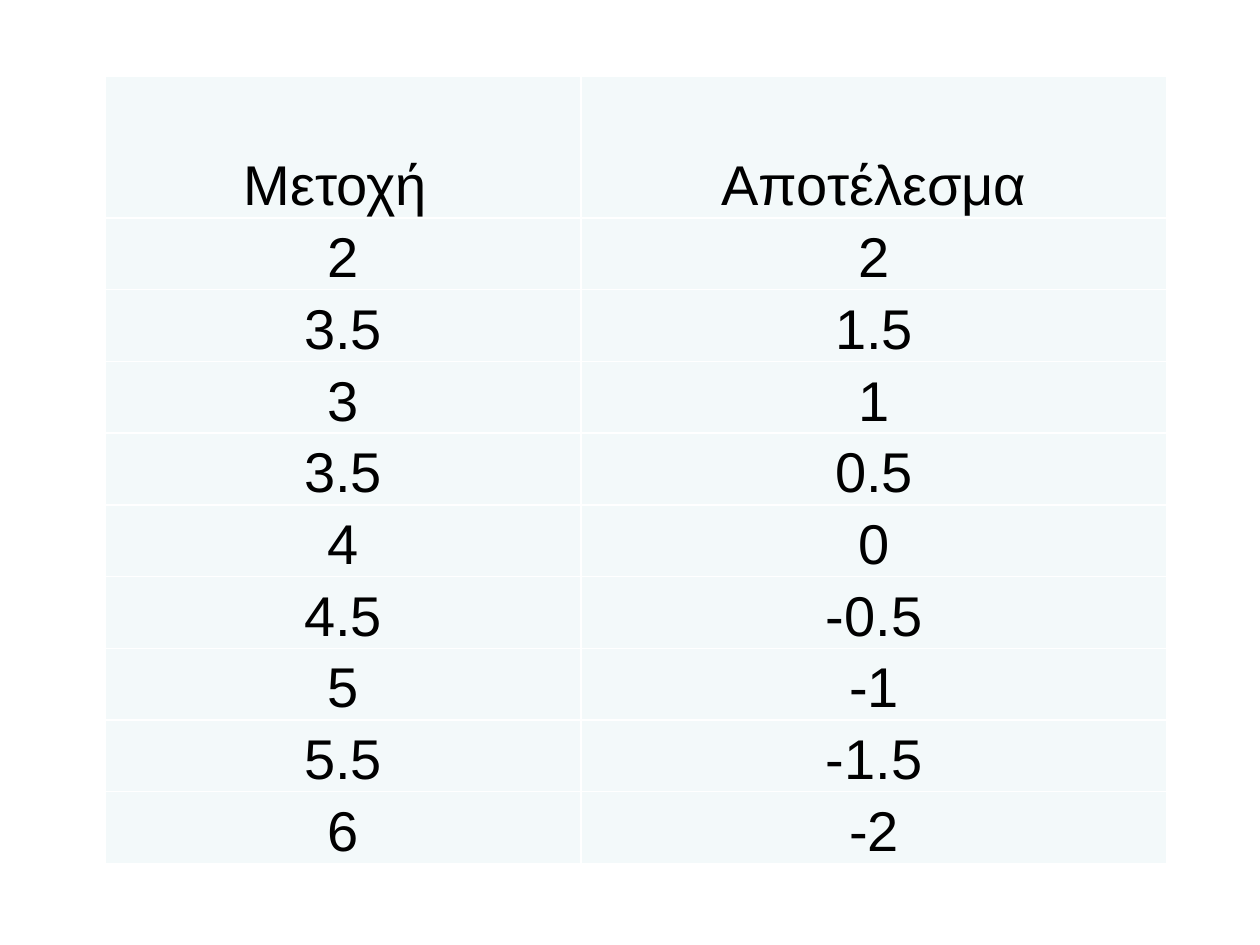
from lxml import etree
from pptx import Presentation
from pptx.dml.color import RGBColor
from pptx.enum.text import MSO_ANCHOR, PP_ALIGN
from pptx.oxml.ns import qn
from pptx.util import Pt

BOTTOM = MSO_ANCHOR.BOTTOM
CENTER = PP_ALIGN.CENTER

ROWS = [
    ("Μετοχή ", "Αποτέλεσμα"),
    ("2", "2"),
    ("3.5", "1.5"),
    ("3", "1"),
    ("3.5", "0.5"),
    ("4", "0"),
    ("4.5", "-0.5"),
    ("5", "-1"),
    ("5.5", "-1.5"),
    ("6", "-2"),
]
WIDTHS = [272, 335]
HEAD, BODY = 81, 41
LEFT, TOP = 60, 43.5
FILL, LINE, INK = "F3F9FA", "FFFFFF", "000000"


def color(code):
    return RGBColor.from_string(code)


def add_edges(cell):
    props = cell._tc.get_or_add_tcPr()
    for spot, side in enumerate(("lnL", "lnR", "lnT", "lnB")):
        edge = etree.Element(qn("a:" + side), w=str(Pt(1)))
        fill = etree.SubElement(edge, qn("a:solidFill"))
        etree.SubElement(fill, qn("a:srgbClr"), val=LINE)
        props.insert(spot, edge)


def set_cell(cell, text):
    cell.fill.solid()
    cell.fill.fore_color.rgb = color(FILL)
    cell.vertical_anchor = BOTTOM
    cell.margin_left = cell.margin_right = cell.margin_top = Pt(0.75)
    cell.margin_bottom = Pt(0)
    para = cell.text_frame.paragraphs[0]
    para.text = text
    para.alignment = CENTER
    font = para.runs[0].font
    font.name = "Arial"
    font.size = Pt(32)
    font.bold = False
    font.color.rgb = color(INK)
    add_edges(cell)


def main():
    deck = Presentation()
    deck.slide_width, deck.slide_height = Pt(720), Pt(540)
    slide = deck.slides.add_slide(deck.slide_layouts[6])
    highs = [HEAD] + [BODY] * (len(ROWS) - 1)
    table = slide.shapes.add_table(
        len(ROWS), len(WIDTHS), Pt(LEFT), Pt(TOP), Pt(sum(WIDTHS)), Pt(sum(highs))
    ).table
    table.first_row = table.horz_banding = False
    for col, width in zip(table.columns, WIDTHS):
        col.width = Pt(width)
    for row, high, texts in zip(table.rows, highs, ROWS):
        row.height = Pt(high)
        for cell, text in zip(row.cells, texts):
            set_cell(cell, text)
    deck.save("out.pptx")


if __name__ == "__main__":
    main()
